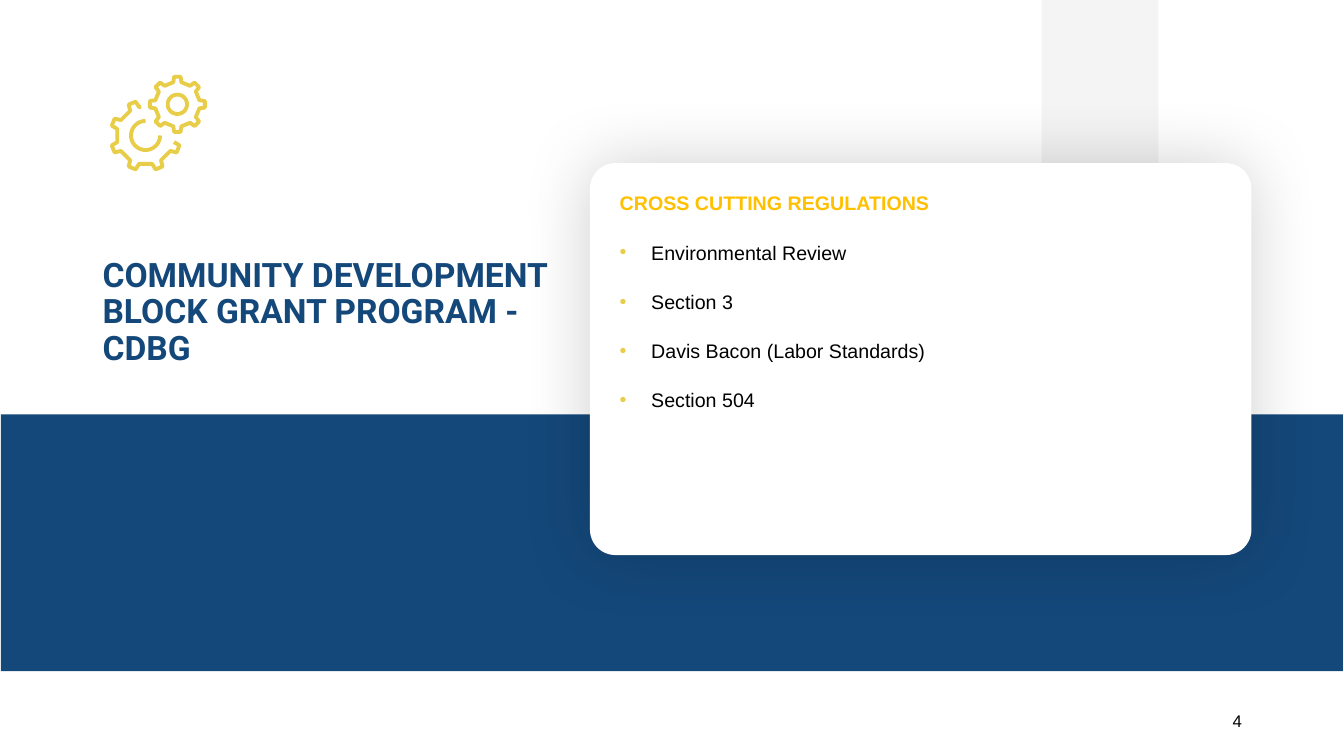
from math import asin, cos, radians, sin

from lxml import etree
from pptx import Presentation
from pptx.dml.color import RGBColor
from pptx.enum.shapes import MSO_SHAPE as Preset
from pptx.enum.text import MSO_ANCHOR as Anchor, PP_ALIGN as Align
from pptx.oxml import parse_xml
from pptx.oxml.ns import nsdecls, qn
from pptx.util import Pt

BLUE, GOLD, AMBER, BLACK = "14487A", "E8CD48", "FFC000", "000000"


def paint(color_holder, color):
    """Give a fill or a font a solid colour from a hex string."""
    if hasattr(color_holder, "solid"):
        color_holder.solid()
        color_holder = color_holder.fore_color
    else:
        color_holder = color_holder.color
    color_holder.rgb = RGBColor.from_string(color)


def ring(cx, cy, radius, start, end):
    """Points along an arc, clockwise, with angles in degrees."""
    return [(cx + radius * cos(radians(angle)), cy + radius * sin(radians(angle)))
            for angle in range(start, end + 1, 10)]


deck = Presentation()
deck.slide_width, deck.slide_height = Pt(960), Pt(540)
slide = deck.slides.add_slide(deck.slide_layouts[6])
shapes = slide.shapes

# Background blocks and card
blocks = []
for preset, left, top, width, height, color in [
    (Preset.RECTANGLE, 744, 0, 83.5, 145.5, "F2F2F2"),
    (Preset.RECTANGLE, 0.7, 296, 958.5, 183.5, BLUE),
    (Preset.ROUNDED_RECTANGLE, 421.4, 116.5, 472.5, 280, "FFFFFF"),
]:
    block = shapes.add_shape(preset, Pt(left), Pt(top), Pt(width), Pt(height))
    block.shadow.inherit = False
    block.line.fill.background()
    paint(block.fill, color)
    blocks.append(block)
stripe, band, card = blocks

stripe_color = stripe.fill._xPr.find(qn("a:solidFill"))[0]
etree.SubElement(stripe_color, qn("a:alpha"), val="80000")
card.adjustments[0] = 0.065
card._element.spPr.find(qn("a:effectLst")).append(parse_xml(
    f'<a:outerShdw {nsdecls("a")} blurRad="{Pt(50)}" dist="0" dir="0" algn="ctr" '
    f'rotWithShape="0"><a:srgbClr val="{BLACK}"><a:alpha val="19000"/></a:srgbClr>'
    '</a:outerShdw>'))

# Text
frames = []
for left, top, width, height, anchor in [
    (66.2, 171.4, 355.7, 104.4, Anchor.MIDDLE),
    (678.2, 500.4, 216, 28.8, Anchor.MIDDLE),
    (435.6, 124.6, 444.2, 276.5, Anchor.TOP),
]:
    frame = shapes.add_textbox(Pt(left), Pt(top), Pt(width), Pt(height)).text_frame
    frame.word_wrap = True
    frame.vertical_anchor = anchor
    frames.append(frame)
title, page_number, regulations = frames

heading = title.paragraphs[0]
heading.text = "COMMUNITY DEVELOPMENT BLOCK GRANT PROGRAM - CDBG"
heading.line_spacing = 0.9
heading.font.name, heading.font.size, heading.font.bold = "Roboto", Pt(24), True
paint(heading.font, BLUE)

number = page_number.paragraphs[0]
number.text = "4"
number.alignment = Align.RIGHT
number.font.name, number.font.size = "Arial", Pt(12)
paint(number.font, BLACK)

for index, text in enumerate([
    "CROSS CUTTING REGULATIONS",
    "Environmental Review",
    "Section 3",
    "Davis Bacon (Labor Standards)",
    "Section 504",
]):
    is_item = index > 0
    entry = regulations.add_paragraph() if is_item else regulations.paragraphs[0]
    entry.text = text
    entry.line_spacing = 1.5
    if is_item:
        entry.space_before = Pt(10)
        properties = entry._p.get_or_add_pPr()
        properties.set("marL", str(Pt(22.5)))
        properties.set("indent", str(Pt(-22.5)))
        bullet_color = etree.SubElement(properties, qn("a:buClr"))
        etree.SubElement(bullet_color, qn("a:srgbClr"), val=GOLD)
        etree.SubElement(properties, qn("a:buFont"), typeface="Arial")
        etree.SubElement(properties, qn("a:buChar"), char="•")
    entry.font.name, entry.font.size, entry.font.bold = "Arial", Pt(14), not is_item
    paint(entry.font, BLACK if is_item else AMBER)

# Gear icon: the large gear is left open where the small one overlaps it
large_x, large_y, small_x, small_y = 104, 96.8, 126.7, 74.5
gear_lines = [
    (ring(large_x, large_y, 10.4, 0, 270), False),
    (ring(small_x, small_y, 6.9, 0, 350), True),
]
for cx, cy, root, tip, half_width, first_tooth, teeth, closed in [
    (large_x, large_y, 20.8, 25.2, 3.4, 22.5, 6, False),
    (small_x, small_y, 16, 19.8, 2.9, 0, 8, True),
]:
    outline = []
    for tooth in range(teeth):
        middle = radians(first_tooth + 45 * tooth)
        root_turn, tip_turn = asin(half_width / root), asin(half_width * 0.8 / tip)
        for radius, turn in [(root, -root_turn), (tip, -tip_turn),
                             (tip, tip_turn), (root, root_turn)]:
            outline.append((cx + radius * cos(middle + turn),
                            cy + radius * sin(middle + turn)))
    if not closed:
        outline.append((cx - 3.2, cy - 20.6))
    gear_lines.append((outline, closed))

for points, closed in gear_lines:
    (start_x, start_y), *others = [(Pt(x), Pt(y)) for x, y in points]
    builder = shapes.build_freeform(start_x, start_y)
    builder.add_line_segments(others, close=closed)
    gear = builder.convert_to_shape()
    gear.shadow.inherit = False
    gear.fill.background()
    gear.line.width = Pt(2.75)
    paint(gear.line.fill, GOLD)

deck.save("out.pptx")
